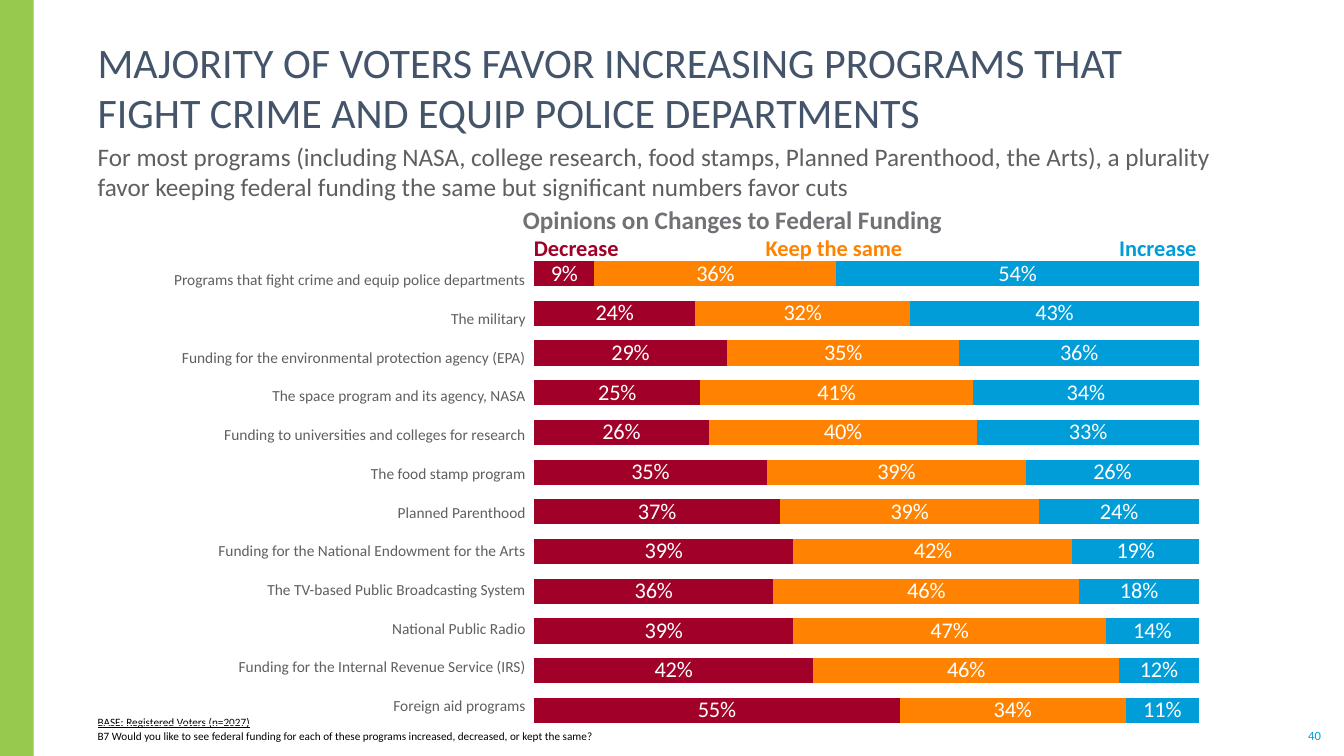
"""Build the slide on voters' opinions of federal funding changes."""
from dataclasses import dataclass

from lxml import etree
from pptx import Presentation
from pptx.chart.data import CategoryChartData
from pptx.dml.color import RGBColor
from pptx.enum.chart import XL_CHART_TYPE, XL_LABEL_POSITION
from pptx.enum.shapes import MSO_SHAPE
from pptx.enum.text import MSO_ANCHOR, MSO_AUTO_SIZE, PP_ALIGN
from pptx.oxml.ns import qn
from pptx.util import Cm, Pt

STACK = XL_CHART_TYPE.BAR_STACKED_100
MID = XL_LABEL_POSITION.CENTER
RECT, ROUND = MSO_SHAPE.RECTANGLE, MSO_SHAPE.ROUNDED_RECTANGLE
TOP, MIDDLE, BOTTOM = MSO_ANCHOR.TOP, MSO_ANCHOR.MIDDLE, MSO_ANCHOR.BOTTOM
LEFT, CENTER, RIGHT = PP_ALIGN.LEFT, PP_ALIGN.CENTER, PP_ALIGN.RIGHT
FIXED = MSO_AUTO_SIZE.NONE


@dataclass(frozen=True)
class Theme:
    """Font, colours and type sizes."""
    font: str = "Calibri"
    green: str = "96C94D"
    navy: str = "44546A"
    gray: str = "5F5F5F"
    slate: str = "707276"
    black: str = "000000"
    white: str = "FFFFFF"
    red: str = "A10028"
    orange: str = "FF8300"
    blue: str = "009DD9"
    title: int = 30
    lead: int = 18
    key: int = 16
    row: int = 11
    page: int = 9
    note: int = 8


THEME = Theme()


def style(font, size, color, bold=False):
    """Set the face, size, colour and weight of a font."""
    font.name, font.size, font.bold = THEME.font, Pt(size), bold
    font.color.rgb = RGBColor.from_string(color)


def write(par, text, size, color, align=LEFT, bold=False):
    """Add one styled run to a paragraph and return it."""
    par.alignment = align
    run = par.add_run()
    run.text = text
    style(run.font, size, color, bold)
    return run


deck = Presentation()
deck.slide_width, deck.slide_height = Cm(33.87), Cm(19.05)
slide = deck.slides.add_slide(deck.slide_layouts[3])
shapes = slide.shapes

side = shapes.add_shape(RECT, 0, 0, Cm(0.85), deck.slide_height)
side.shadow.inherit = False
side.fill.solid()
side.fill.fore_color.rgb = RGBColor.from_string(THEME.green)
side.line.fill.background()

title, lead, note = slide.placeholders
frames = [
    (title, 1.88, 30.25, 1.57, BOTTOM),
    (lead, 3.56, 29.13, 0.79, TOP),
    (note, 17.7, 30.25, 1.02, BOTTOM),
]
for holder, top, width, height, anchor in frames:
    holder.left, holder.top = Cm(2.21), Cm(top)
    holder.width, holder.height = Cm(width), Cm(height)
    frame = holder.text_frame
    frame.word_wrap, frame.auto_size = True, FIXED
    frame.vertical_anchor = anchor
    frame.margin_left = frame.margin_right = Cm(0.25)
    frame.margin_top = frame.margin_bottom = 0

head = title.text_frame.paragraphs[0]
write(head, "MAJORITY OF VOTERS FAVOR INCREASING PROGRAMS THAT ", THEME.title, THEME.navy)
head.add_line_break()
write(head, "FIGHT CRIME AND EQUIP POLICE DEPARTMENTS", THEME.title, THEME.navy)

first = lead.text_frame.paragraphs[0]
base = note.text_frame.paragraphs[0]
ask = note.text_frame.add_paragraph()
for par in (first, base, ask):
    props = par._p.get_or_add_pPr()
    props.set("marL", "0")
    props.set("indent", "0")
    etree.SubElement(props, qn("a:buNone"))
    par.space_before = Pt(0)
ask.space_before = Pt(0.6)
write(first, "For most programs (including NASA, college research, food stamps, Planned Parenthood, "
      "the Arts), a plurality favor keeping federal funding the same but significant numbers "
      "favor cuts", THEME.lead, THEME.gray)
write(base, "BASE: Registered Voters (n=2027)", THEME.note, THEME.black).font.underline = True
write(ask, "B7 Would you like to see federal funding for each of these programs increased, "
      "decreased, or kept the same?", THEME.note, THEME.black)

votes = [
    ("Programs that fight crime and equip police departments", 0.09, 0.36, 0.54),
    ("The military", 0.24, 0.32, 0.43),
    ("Funding for the environmental protection agency (EPA)", 0.29, 0.35, 0.36),
    ("The space program and its agency, NASA", 0.25, 0.41, 0.34),
    ("Funding to universities and colleges for research", 0.26, 0.4, 0.33),
    ("The food stamp program", 0.35, 0.39, 0.26),
    ("Planned Parenthood", 0.37, 0.39, 0.24),
    ("Funding for the National Endowment for the Arts", 0.39, 0.42, 0.19),
    ("The TV-based Public Broadcasting System", 0.36, 0.46, 0.18),
    ("National Public Radio", 0.39, 0.47, 0.14),
    ("Funding for the Internal Revenue Service (IRS)", 0.42, 0.46, 0.12),
    ("Foreign aid programs", 0.55, 0.34, 0.11),
]

table = shapes.add_table(len(votes), 1, Cm(2.41), Cm(6.55), Cm(10.87), Cm(11.71)).table
table.first_row = table.horz_banding = False
for index, vote in enumerate(votes):
    cell = table.cell(index, 0)
    cell.fill.background()
    cell.vertical_anchor = MIDDLE
    cell.margin_left = cell.margin_right = cell.margin_top = Cm(0.03)
    cell.margin_bottom = 0
    par = cell.text_frame.paragraphs[0]
    par.line_spacing, par.space_after = 1.07, Pt(8)
    write(par, vote[0], THEME.row, THEME.gray, RIGHT)

keys = [
    ("Decrease", THEME.red, 11.86, 5.33, CENTER),
    ("Keep the same", THEME.orange, 17.63, 6.78, CENTER),
    ("Increase", THEME.blue, 24.0, 6.48, RIGHT),
]

data = CategoryChartData(number_format="0%")
data.categories = [str(num + 1) for num in range(len(votes))]
for index, key in enumerate(keys):
    data.add_series(key[0], [vote[index + 1] for vote in reversed(votes)])
chart = shapes.add_chart(STACK, Cm(13.11), Cm(6.15), Cm(17.45), Cm(12.5), data).chart
chart.has_legend = chart.has_title = False
style(chart.font, 10, THEME.gray)
chart.category_axis.visible = chart.value_axis.visible = False
chart.value_axis.has_major_gridlines = False
chart.value_axis.minimum_scale, chart.value_axis.maximum_scale = 0, 1
plot = chart.plots[0]
plot.gap_width, plot.overlap = 57, 100
plot.vary_by_categories = False
for series, key in zip(plot.series, keys):
    series.format.fill.solid()
    series.format.fill.fore_color.rgb = RGBColor.from_string(key[1])
    labels = series.data_labels
    labels.show_value, labels.position = True, MID
    labels.number_format, labels.number_format_is_linked = "0%", False
    style(labels.font, THEME.key, THEME.white)

topic = shapes.add_textbox(Cm(10.13), Cm(5.03), Cm(16.66), Cm(1.02)).text_frame
topic.word_wrap = True
write(topic.paragraphs[0], "Opinions on Changes to Federal Funding", THEME.lead,
      THEME.slate, CENTER, True)

for name, color, left, width, align in keys:
    tag = shapes.add_shape(ROUND, Cm(left), Cm(5.46), Cm(width), Cm(1.55))
    tag.shadow.inherit = False
    tag.fill.background()
    tag.line.fill.background()
    tag.text_frame.vertical_anchor = MIDDLE
    write(tag.text_frame.paragraphs[0], name, THEME.key, color, align, True)

page = shapes.add_textbox(Cm(32.94), Cm(18.34), Cm(0.38), Cm(0.38)).text_frame
page.word_wrap = False
page.vertical_anchor = MIDDLE
page.margin_left = page.margin_right = page.margin_top = page.margin_bottom = 0
write(page.paragraphs[0], "40", THEME.page, THEME.blue, CENTER)

deck.save("out.pptx")
